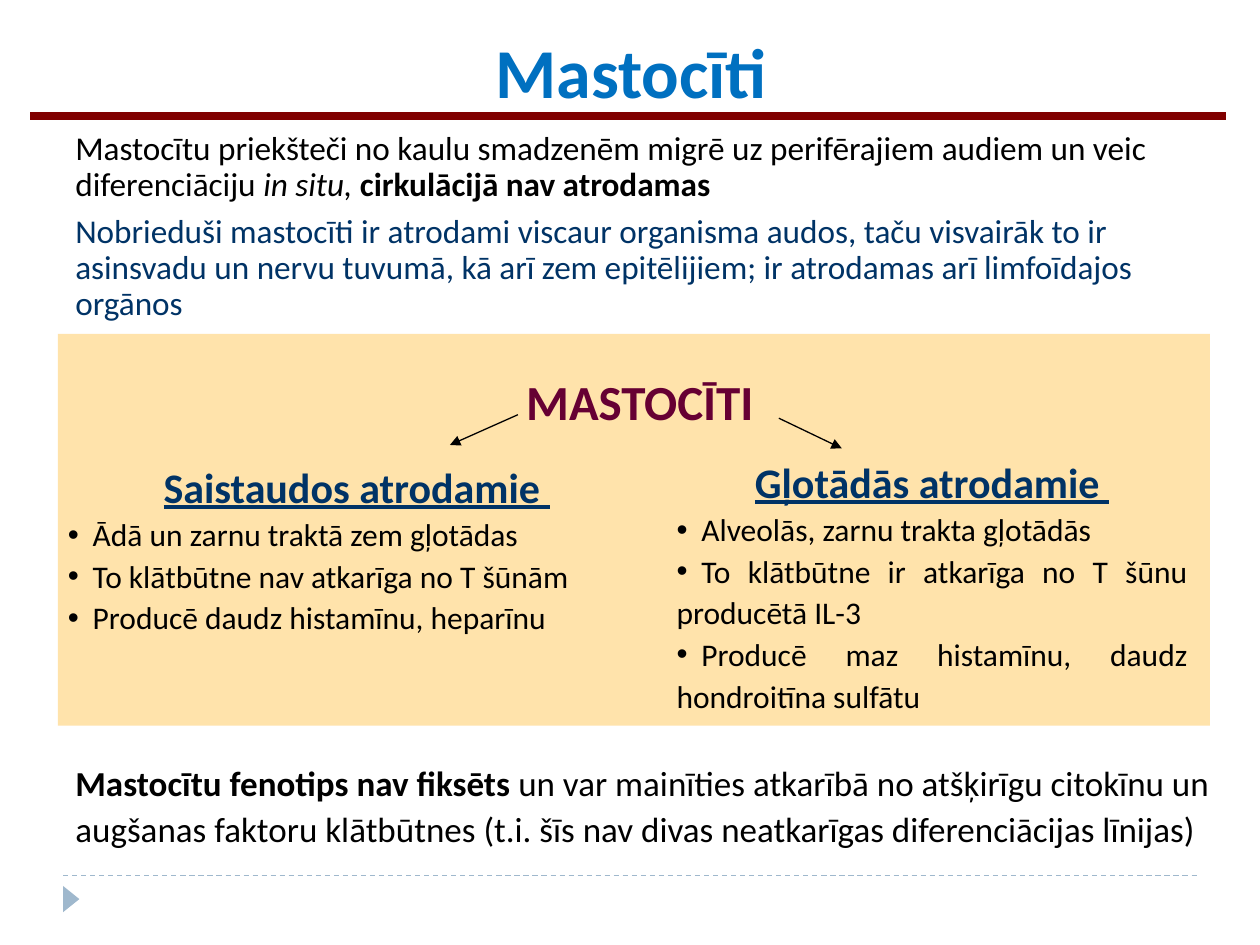
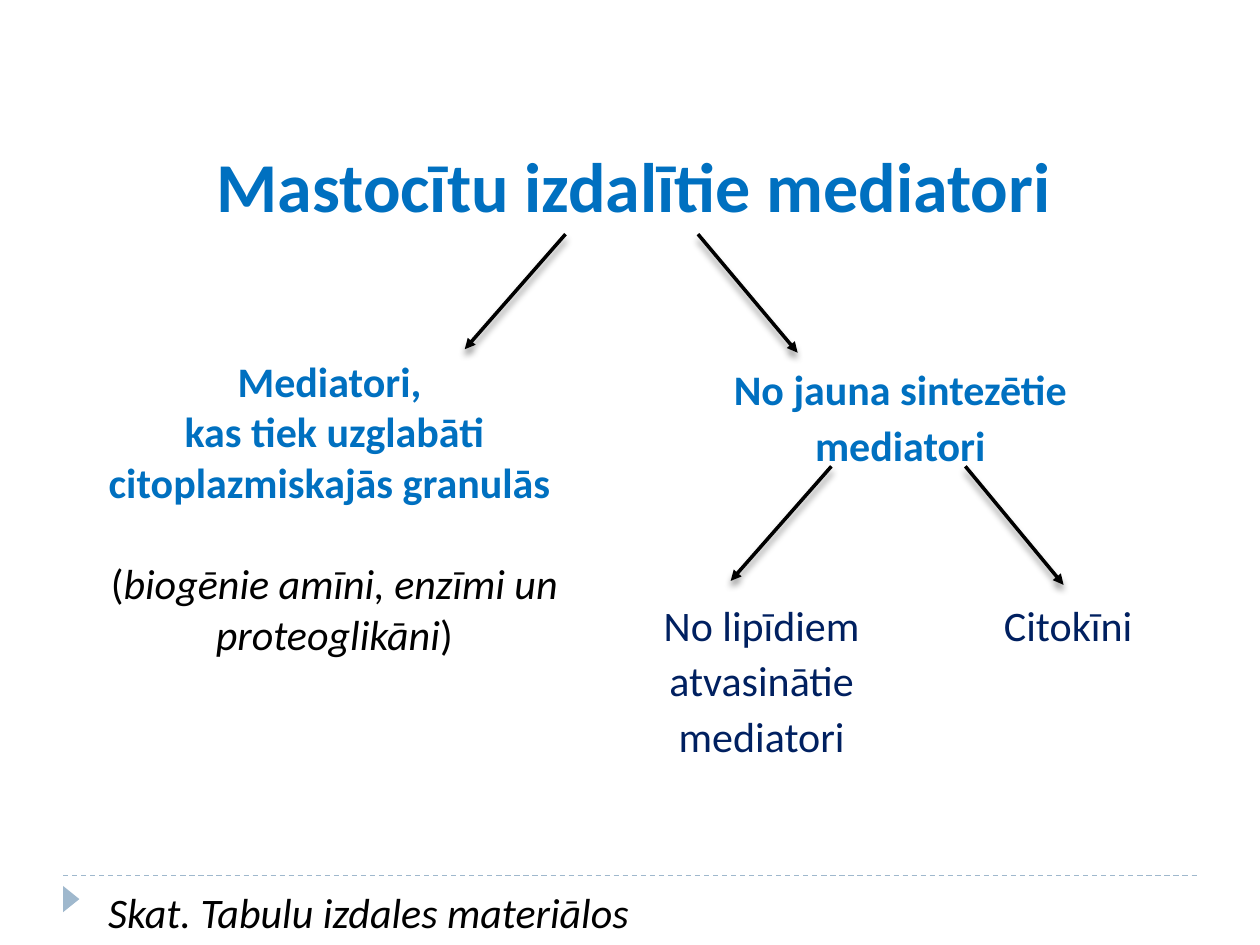
from lxml import etree
from pptx import Presentation
from pptx.dml.color import RGBColor
from pptx.enum.dml import MSO_LINE
from pptx.enum.shapes import MSO_CONNECTOR, MSO_SHAPE
from pptx.enum.text import PP_ALIGN
from pptx.oxml.ns import qn
from pptx.util import Cm, Pt

LEFT, CENTER, JUSTIFY = PP_ALIGN.LEFT, PP_ALIGN.CENTER, PP_ALIGN.JUSTIFY
STRAIGHT = MSO_CONNECTOR.STRAIGHT
RECTANGLE, TRIANGLE = MSO_SHAPE.RECTANGLE, MSO_SHAPE.ISOSCELES_TRIANGLE
DASH = MSO_LINE.DASH

FONT = "Calibri"
BULLET_GAP = Cm(0.5)
COLORS = {
    "title": "0070C0", "rule": "800000", "panel": "FFE3AB", "footer": "9FB8CD",
    "black": "000000", "blue": "003366", "wine": "660033", "navy": "002060",
}
TITLE = {"size": 40, "color": "title", "bold": True}
BRANCH = {"size": 24, "color": "title", "bold": True}
LEAF = {"size": 24, "color": "navy"}
GROUP = {"size": 24, "color": "blue", "bold": True, "underline": True}


def add_text(slide, box, paragraphs):
    """Each paragraph is (layout, [(text, style), ...])."""
    frame = slide.shapes.add_textbox(*[Cm(length) for length in box]).text_frame
    frame.word_wrap = True
    for index, (layout, runs) in enumerate(paragraphs):
        paragraph = frame.add_paragraph() if index else frame.paragraphs[0]
        if layout.get("bullet"):
            properties = paragraph._p.get_or_add_pPr()
            etree.SubElement(properties, qn("a:buFont"), typeface="Arial")
            etree.SubElement(properties, qn("a:buChar"), char="•")
            tabs = etree.SubElement(properties, qn("a:tabLst"))
            etree.SubElement(tabs, qn("a:tab"), pos=str(BULLET_GAP), algn="l")
        paragraph.alignment = layout.get("align", LEFT)
        paragraph.line_spacing = layout.get("spacing", 1.0)
        paragraph.space_before = Pt(layout.get("before", 0))
        paragraph.space_after = Pt(layout.get("after", 0))
        for text, style in runs:
            run = paragraph.add_run()
            run.text = text
            run.font.name = FONT
            run.font.size = Pt(style["size"])
            run.font.color.rgb = RGBColor.from_string(COLORS[style.get("color", "black")])
            run.font.bold = style.get("bold", False)
            run.font.italic = style.get("italic", False)
            run.font.underline = style.get("underline", False)


def add_line(slide, ends, color, width, arrow=False, shadow=False):
    line = slide.shapes.add_connector(STRAIGHT, *[Cm(length) for length in ends])
    line.line.color.rgb = RGBColor.from_string(COLORS[color])
    line.line.width = Pt(width)
    if arrow:
        etree.SubElement(line.line._get_or_add_ln(), qn("a:tailEnd"), type="triangle")
    effects = etree.SubElement(line._element.spPr, qn("a:effectLst"))
    if shadow:
        outer = etree.SubElement(effects, qn("a:outerShdw"), blurRad=str(Pt(4)),
                                 dist=str(Pt(3.4)), dir="5400000", rotWithShape="0")
        shade = etree.SubElement(outer, qn("a:srgbClr"), val=COLORS["black"])
        etree.SubElement(shade, qn("a:alpha"), val="40000")
    return line


presentation = Presentation()
presentation.slide_width, presentation.slide_height = Cm(25.4), Cm(19.05)
blank = presentation.slide_layouts[6]
cells_slide, mediators_slide = [presentation.slides.add_slide(blank) for _ in range(2)]

# Shared footer: dashed line and pointer
for slide in (cells_slide, mediators_slide):
    add_line(slide, (1.27, 17.65, 24.13, 17.65), "footer", 0.75).line.dash_style = DASH
    pointer = slide.shapes.add_shape(TRIANGLE, Cm(1.17), Cm(17.96), Cm(0.53), Cm(0.33))
    pointer.rotation = 90
    pointer.shadow.inherit = False
    pointer.fill.solid()
    pointer.fill.fore_color.rgb = RGBColor.from_string(COLORS["footer"])
    pointer.line.fill.background()

# Slide 1: panel, title and rule
panel = cells_slide.shapes.add_shape(RECTANGLE, Cm(1.17), Cm(6.73), Cm(23.22), Cm(7.9))
panel.shadow.inherit = False
panel.fill.solid()
panel.fill.fore_color.rgb = RGBColor.from_string(COLORS["panel"])
panel.line.fill.background()
add_text(cells_slide, (0.51, 0.46, 24.43, 1.96),
         [({"align": CENTER}, [("Mastocīti", TITLE)])])
add_line(cells_slide, (0.61, 2.34, 24.71, 2.34), "rule", 4.5)

# Slide 1: introduction
add_text(cells_slide, (1.27, 2.54, 23.47, 4.1), [
    ({"spacing": 0.9, "after": 6}, [
        ("Mastocītu priekšteči no kaulu smadzenēm migrē uz perifērajiem audiem "
         "un veic diferenciāciju ", {"size": 19}),
        ("in situ, ", {"size": 19, "italic": True}),
        ("cirkulācijā nav atrodamas", {"size": 19, "bold": True}),
    ]),
    ({"spacing": 0.9}, [
        ("Nobrieduši mastocīti ir atrodami viscaur organisma audos, taču visvairāk "
         "to ir asinsvadu un nervu tuvumā, kā arī zem epitēlijiem; ir atrodamas "
         "arī limfoīdajos orgānos", {"size": 19, "color": "blue"}),
    ]),
])

# Slide 1: the two groups of cells
add_text(cells_slide, (8.9, 7.37, 8, 1.45),
         [({"align": CENTER}, [("MASTOCĪTI", {"size": 28, "color": "wine", "bold": True})])])
groups = [
    ((1.12, 9.07, 12.14, 3.91), "Saistaudos atrodamie ", [
        "Ādā un zarnu traktā zem gļotādas",
        "To klātbūtne nav atkarīga no T šūnām",
        "Producē daudz histamīnu, heparīnu",
    ]),
    ((13.39, 8.97, 10.8, 5.61), "Gļotādās atrodamie ", [
        "Alveolās, zarnu trakta gļotādās",
        "To klātbūtne ir atkarīga no T šūnu producētā IL-3",
        "Producē maz histamīnu, daudz hondroitīna sulfātu",
    ]),
]
for box, heading, features in groups:
    paragraphs = [({"align": CENTER, "spacing": 1.1}, [(heading, GROUP)])]
    for feature in features:
        paragraphs.append(({"align": JUSTIFY, "spacing": 1.1, "bullet": True},
                           [("\t" + feature, {"size": 18})]))
    add_text(cells_slide, box, paragraphs)
for ends in [(10.44, 8.36, 9.07, 8.97), (15.7, 8.43, 16.97, 9.04)]:
    add_line(cells_slide, ends, "black", 0.75, arrow=True)

# Slide 1: conclusion
add_text(cells_slide, (1.27, 15.14, 23.67, 2.13), [({"spacing": 1.1}, [
    ("Mastocītu fenotips nav fiksēts ", {"size": 20, "bold": True}),
    ("un var mainīties atkarībā no atšķirīgu citokīnu un augšanas faktoru klātbūtnes "
     "(t.i. šīs nav divas neatkarīgas diferenciācijas līnijas)", {"size": 20}),
])])

# Slide 2: title and stored mediators
add_text(mediators_slide, (1.27, 1.57, 23.01, 2.82),
         [({"align": CENTER, "spacing": 1.7}, [("Mastocītu izdalītie mediatori", TITLE)])])
add_text(mediators_slide, (1.57, 7.04, 10.34, 7.44), [
    ({"align": CENTER}, [("Mediatori, ", BRANCH)]),
    ({"align": CENTER}, [("kas tiek uzglabāti citoplazmiskajās granulās ", BRANCH)]),
    ({"align": CENTER, "before": 29.3}, [
        ("(", {"size": 24}),
        ("biogēnie amīni, enzīmi un proteoglikāni", {"size": 24, "italic": True}),
        (")", {"size": 24}),
    ]),
])

# Slide 2: newly made mediators and the source note
labels = [
    ((13.82, 7.11, 8.66, 2.51), CENTER, "No jauna sintezētie mediatori", BRANCH),
    ((12.7, 11.86, 5.31, 4.78), CENTER, "No lipīdiem atvasinātie mediatori", LEAF),
    ((19.99, 11.86, 4.6, 1.32), LEFT, "Citokīni", LEAF),
    ((1.93, 17.65, 12.14, 1.4), LEFT, "Skat. Tabulu izdales materiālos",
     {"size": 24, "italic": True}),
]
for box, align, text, style in labels:
    add_text(mediators_slide, box, [({"align": align, "spacing": 1.1}, [(text, style)])])

# Slide 2: arrows of the tree
for ends in [(11.4, 4.72, 9.37, 7.04), (14.07, 4.72, 16.08, 7.11),
             (16.76, 9.4, 14.73, 11.71), (19.46, 9.4, 21.44, 11.79)]:
    add_line(mediators_slide, ends, "black", 2, arrow=True, shadow=True)

presentation.save("out.pptx")
